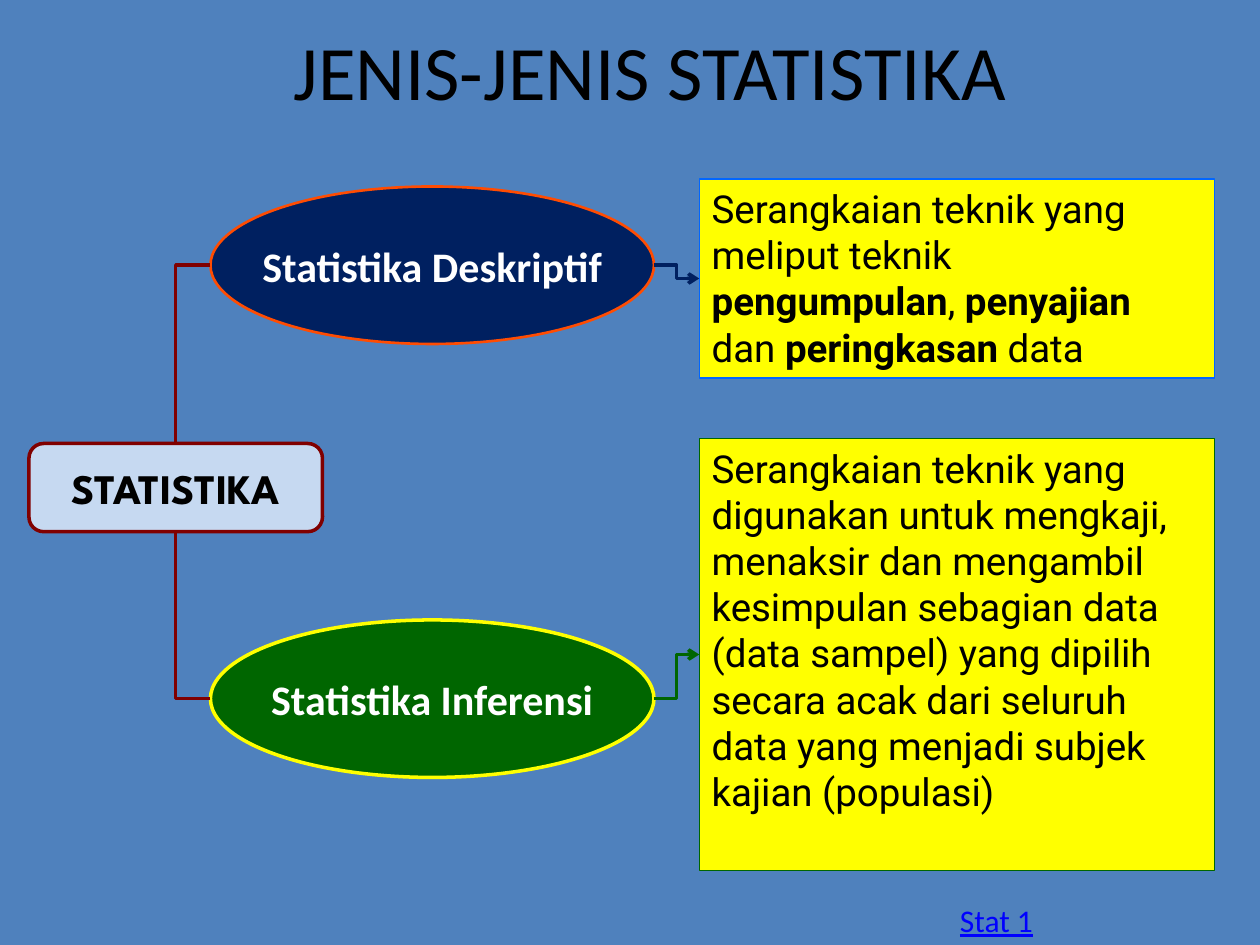
from dataclasses import dataclass

from lxml.etree import SubElement
from pptx import Presentation
from pptx.dml.color import RGBColor
from pptx.enum.shapes import MSO_CONNECTOR, MSO_SHAPE
from pptx.enum.text import MSO_ANCHOR, PP_ALIGN
from pptx.oxml.ns import qn
from pptx.util import Inches, Pt


@dataclass(frozen=True)
class Theme:
    """Colours, fonts and type sizes of the slide."""
    background: str = "4F81BD"
    ink: str = "000000"
    white: str = "FFFFFF"
    link: str = "0000FF"
    yellow: str = "FFFF00"
    pale: str = "C6D9F1"
    maroon: str = "800000"
    navy: str = "002060"
    green: str = "006600"
    orange: str = "FF4C02"
    blue: str = "0166FF"
    main_font: str = "Calibri"
    root_font: str = "League Spartan"
    body_font: str = "Roboto"
    title_size: int = 44
    label_size: int = 24
    body_size: int = 22
    link_size: int = 18


class ConceptMap:
    """Draws the elements of a concept map on one page."""

    def __init__(self, page, theme):
        self.page = page
        self.theme = theme
        page.background.fill.solid()
        page.background.fill.fore_color.rgb = RGBColor.from_string(theme.background)

    def add_spans(self, shape, spans, font, size, color, align=PP_ALIGN.LEFT,
                  anchor=MSO_ANCHOR.TOP, wrap=True, underline=None):
        """Fill a shape with one paragraph of (text, bold) spans."""
        frame = shape.text_frame
        frame.word_wrap = wrap
        frame.vertical_anchor = anchor
        para = frame.paragraphs[0]
        para.alignment = align
        for text, bold in spans:
            span = para.add_run()
            span.text = text
            span.font.name = font
            span.font.size = Pt(size)
            span.font.bold = bold
            span.font.underline = underline
            span.font.color.rgb = RGBColor.from_string(color)

    def label(self, place, text, size, color, **style):
        """Add a plain text box."""
        box = self.page.shapes.add_textbox(*map(Inches, place))
        self.add_spans(box, [(text, False)], self.theme.main_font, size, color, **style)

    def block(self, kind, place, fill, line, width):
        """Add a filled and outlined shape."""
        shape = self.page.shapes.add_shape(kind, *map(Inches, place))
        shape.shadow.inherit = False
        shape.fill.solid()
        shape.fill.fore_color.rgb = RGBColor.from_string(fill)
        shape.line.color.rgb = RGBColor.from_string(line)
        shape.line.width = Pt(width)
        return shape

    def node(self, kind, place, text, font, color, fill, line, width):
        """Add a shape with a bold centred label."""
        shape = self.block(kind, place, fill, line, width)
        self.add_spans(shape, [(text, True)], font, self.theme.label_size, color,
                       PP_ALIGN.CENTER, MSO_ANCHOR.MIDDLE, wrap=False)

    def note(self, place, spans, line):
        """Add a yellow definition box."""
        shape = self.block(MSO_SHAPE.RECTANGLE, place, self.theme.yellow, line, 0.75)
        self.add_spans(shape, spans, self.theme.body_font, self.theme.body_size,
                       self.theme.ink)

    def elbow(self, start, end, color, single_bend=False, arrow=False):
        """Add a bent connector that leaves its start horizontally."""
        link = self.page.shapes.add_connector(
            MSO_CONNECTOR.ELBOW, *map(Inches, (*start, *end)))
        link.line.color.rgb = RGBColor.from_string(color)
        link.line.width = Pt(2)
        properties = link._element.spPr
        if single_bend:
            properties.find(qn("a:prstGeom")).set("prst", "bentConnector2")
        if arrow:
            SubElement(properties.find(qn("a:ln")), qn("a:tailEnd"), type="arrow")
        SubElement(properties, qn("a:effectLst"))


def main():
    """Build the slide and save it."""
    deck = Presentation()
    deck.slide_width, deck.slide_height = Inches(10), Inches(7.5)
    theme = Theme()
    chart = ConceptMap(deck.slides.add_slide(deck.slide_layouts[6]), theme)

    chart.label((7.52, 7.1, 0.79, 0.4), "Stat 1", theme.link_size, theme.link,
                wrap=False, underline=True)
    chart.label((0.55, 0.08, 9.22, 0.94), "JENIS-JENIS STATISTIKA", theme.title_size,
                theme.ink, align=PP_ALIGN.CENTER, anchor=MSO_ANCHOR.MIDDLE)

    root_left, root_top, root_width, root_height = root = (0.23, 3.52, 2.33, 0.7)
    root_middle = root_left + root_width / 2
    chart.node(MSO_SHAPE.ROUNDED_RECTANGLE, root, "STATISTIKA", theme.root_font,
               theme.ink, theme.pale, theme.maroon, 2)

    oval_left, oval_width, oval_height = 1.67, 3.52, 1.25
    note_left, note_width = 5.55, 4.09
    descriptive = [("Serangkaian teknik yang meliput teknik ", False),
                   ("pengumpulan", True), (", ", False), ("penyajian", True),
                   (" dan ", False), ("peringkasan", True), (" data", False)]
    inferential = [("Serangkaian teknik yang digunakan untuk mengkaji, menaksir dan "
                    "mengambil kesimpulan sebagian data (data sampel) yang dipilih secara "
                    "acak dari seluruh data yang menjadi subjek kajian (populasi)", False)]
    branches = [
        ("Statistika Deskriptif", 1.48, theme.navy, theme.orange, 1.5, root_top,
         descriptive, 1.42, 1.58, theme.blue),
        ("Statistika Inferensi", 4.92, theme.green, theme.yellow, 2, root_top + root_height,
         inferential, 3.48, 3.43, theme.green),
    ]
    for (name, top, fill, line, width, root_edge,
         spans, note_top, note_height, note_line) in branches:
        middle = top + oval_height / 2
        chart.node(MSO_SHAPE.OVAL, (oval_left, top, oval_width, oval_height), name,
                   theme.main_font, theme.white, fill, line, width)
        chart.elbow((oval_left, middle), (root_middle, root_edge), theme.maroon,
                    single_bend=True)
        chart.note((note_left, note_top, note_width, note_height), spans, note_line)
        chart.elbow((oval_left + oval_width, middle),
                    (note_left, note_top + note_height / 2), fill, arrow=True)

    deck.save("out.pptx")


if __name__ == "__main__":
    main()
